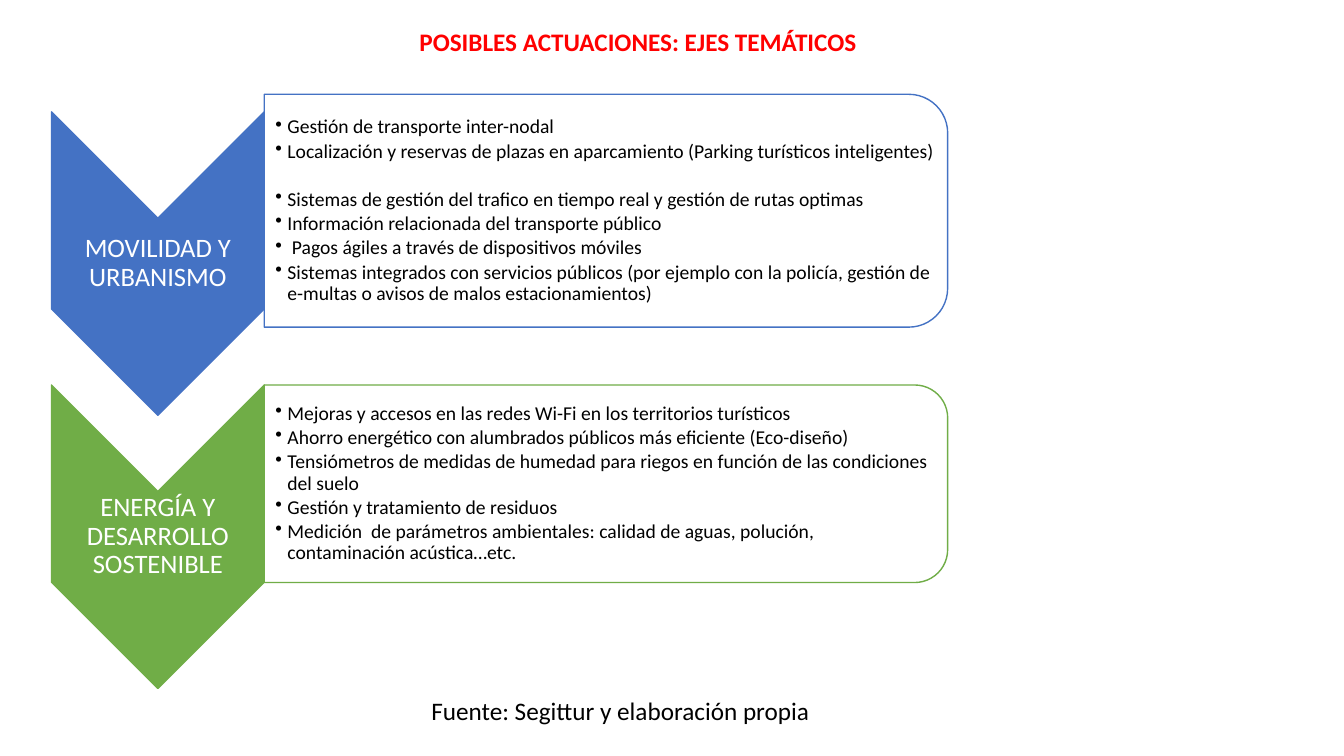
from pptx import Presentation
from pptx.dml.color import RGBColor
from pptx.enum.shapes import MSO_SHAPE
from pptx.enum.text import MSO_ANCHOR, PP_ALIGN
from pptx.oxml.ns import qn
from pptx.util import Inches, Pt
from lxml import etree

CHEVRON = MSO_SHAPE.CHEVRON
ROUNDED_PANEL = MSO_SHAPE.ROUND_2_SAME_RECTANGLE
MIDDLE = MSO_ANCHOR.MIDDLE
TOP = MSO_ANCHOR.TOP
LEFT = PP_ALIGN.LEFT
CENTER = PP_ALIGN.CENTER

WIDTH = Inches(13.33)
HEIGHT = Inches(7.5)
CHEVRON_LEFT, CHEVRON_WIDTH, CHEVRON_HEIGHT = 3.83, 15.83, 40.13
LABEL_OFFSET, LABEL_HEIGHT = 14.05, 12
PANEL_LEFT = CHEVRON_LEFT + CHEVRON_WIDTH
PANEL_WIDTH, PANEL_TEXT_WIDTH = 50.85, 50.1
LABEL_INSETS = (0.01, 0.01, 0.01, 0.01)
PANEL_INSETS = (0.11, 0.01, 0.01, 0.01)
BOX_INSETS = (0.1, 0.05, 0.1, 0.05)
ITEM_GAP, GROUP_GAP = 2.1, 19.6

AXES = [
    {
        "name": "MOVILIDAD Y URBANISMO",
        "color": "4472C4",
        "chevron_top": 14.8,
        "panel_top": 12.47,
        "panel_height": 30.8,
        "groups": [
            [
                "Gestión de transporte inter-nodal",
                "Localización y reservas de plazas en aparcamiento (Parking turísticos inteligentes)",
            ],
            [
                "Sistemas de gestión del trafico en tiempo real y gestión de rutas optimas",
                "Información relacionada del transporte público",
                " Pagos ágiles a través de dispositivos móviles",
                "Sistemas integrados con servicios públicos (por ejemplo con la policía, "
                "gestión de e-multas o avisos de malos estacionamientos)",
            ],
        ],
    },
    {
        "name": "ENERGÍA Y DESARROLLO SOSTENIBLE",
        "color": "70AD47",
        "chevron_top": 50.93,
        "panel_top": 50.93,
        "panel_height": 26.13,
        "groups": [
            [
                "Mejoras y accesos en las redes Wi-Fi en los territorios turísticos",
                "Ahorro energético con alumbrados públicos más eficiente (Eco-diseño)",
                "Tensiómetros de medidas de humedad para riegos en función de las condiciones del suelo",
                "Gestión y tratamiento de residuos",
                "Medición  de parámetros ambientales: calidad de aguas, polución, "
                "contaminación acústica…etc.",
            ],
        ],
    },
]


def rgb(color):
    return RGBColor.from_string(color)


def area(left, top, width, height):
    return (
        int(WIDTH * left / 100),
        int(HEIGHT * top / 100),
        int(WIDTH * width / 100),
        int(HEIGHT * height / 100),
    )


def add_turned_shape(slide, kind, frame, fill, line):
    left, top, width, height = frame
    shift = (width - height) // 2
    shape = slide.shapes.add_shape(kind, left + shift, top - shift, height, width)
    shape.rotation = 90
    shape.shadow.inherit = False
    shape.fill.solid()
    shape.fill.fore_color.rgb = rgb(fill)
    shape.line.color.rgb = rgb(line)
    shape.line.width = Pt(1)
    return shape


def set_opacity(shape, percent):
    color = shape.fill._xPr.find(qn("a:solidFill"))[0]
    etree.SubElement(color, qn("a:alpha")).set("val", str(percent * 1000))


def add_text_frame(slide, frame, insets, anchor):
    text_frame = slide.shapes.add_textbox(*frame).text_frame
    text_frame.word_wrap = True
    text_frame.vertical_anchor = anchor
    (
        text_frame.margin_left,
        text_frame.margin_top,
        text_frame.margin_right,
        text_frame.margin_bottom,
    ) = map(Inches, insets)
    return text_frame


def format_paragraph(paragraph, size, color, alignment=LEFT, bold=False):
    paragraph.alignment = alignment
    for run in paragraph.runs:
        run.font.name = "Calibri"
        run.font.size = Pt(size)
        run.font.bold = bold
        run.font.color.rgb = rgb(color)


def add_bullet(paragraph):
    properties = paragraph._p.get_or_add_pPr()
    properties.set("marL", str(Inches(0.12)))
    properties.set("indent", str(-Inches(0.12)))
    etree.SubElement(properties, qn("a:buChar")).set("char", "•")


def add_caption(slide, text, frame, color, alignment=LEFT, bold=False):
    text_frame = add_text_frame(slide, frame, BOX_INSETS, TOP)
    text_frame.text = text
    format_paragraph(text_frame.paragraphs[0], 18, color, alignment, bold)


def add_axis_chevron(slide, axis):
    top = axis["chevron_top"]
    frame = area(CHEVRON_LEFT, top, CHEVRON_WIDTH, CHEVRON_HEIGHT)
    add_turned_shape(slide, CHEVRON, frame, axis["color"], axis["color"])
    label = area(CHEVRON_LEFT, top + LABEL_OFFSET, CHEVRON_WIDTH, LABEL_HEIGHT)
    text_frame = add_text_frame(slide, label, LABEL_INSETS, MIDDLE)
    text_frame.text = axis["name"]
    paragraph = text_frame.paragraphs[0]
    paragraph.line_spacing = 0.9
    format_paragraph(paragraph, 19, "FFFFFF", CENTER)


def add_action_panel(slide, axis):
    top, height = axis["panel_top"], axis["panel_height"]
    frame = area(PANEL_LEFT, top, PANEL_WIDTH, height)
    panel = add_turned_shape(slide, ROUNDED_PANEL, frame, "FFFFFF", axis["color"])
    set_opacity(panel, 90)
    text_area = area(PANEL_LEFT, top, PANEL_TEXT_WIDTH, height)
    text_frame = add_text_frame(slide, text_area, PANEL_INSETS, MIDDLE)
    groups = axis["groups"]
    text_frame.text = "\n".join(item for group in groups for item in group)
    paragraphs = iter(text_frame.paragraphs)
    for group in groups:
        for item in group:
            paragraph = next(paragraphs)
            add_bullet(paragraph)
            paragraph.line_spacing = 0.9
            ends_group = item == group[-1] and group is not groups[-1]
            paragraph.space_after = Pt(GROUP_GAP if ends_group else ITEM_GAP)
            format_paragraph(paragraph, 14, "000000")


def main():
    presentation = Presentation()
    presentation.slide_width = WIDTH
    presentation.slide_height = HEIGHT
    slide = presentation.slides.add_slide(presentation.slide_layouts[6])
    for axis in AXES:
        add_axis_chevron(slide, axis)
        add_action_panel(slide, axis)
    add_caption(slide, "Fuente: Segittur y elaboración propia",
                area(31.35, 91.33, 31.73, 5.33), "000000")
    add_caption(slide, "POSIBLES ACTUACIONES: EJES TEMÁTICOS",
                area(24.45, 2.8, 46.05, 5.33), "FF0000", CENTER, True)
    presentation.save("out.pptx")


if __name__ == "__main__":
    main()
